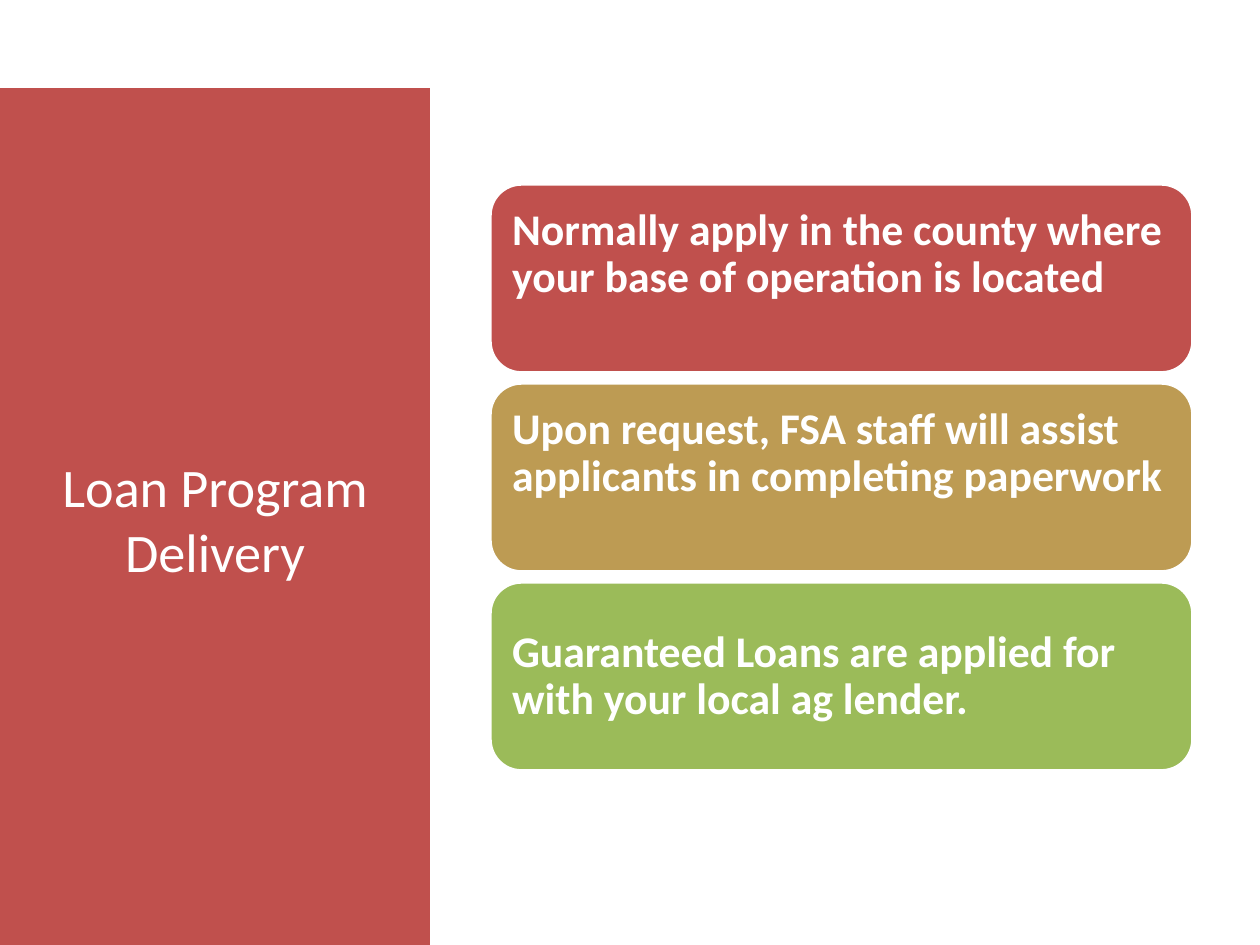
from pptx import Presentation
from pptx.dml.color import RGBColor
from pptx.enum.shapes import MSO_SHAPE as Shape
from pptx.enum.text import MSO_ANCHOR as Anchor, PP_ALIGN as Align
from pptx.util import Emu, Pt

PX_PER_INCH = 126
WHITE, RED, GOLD, GREEN = "FFFFFF", "C0504D", "BD9B53", "9BBB59"
INSET = 13
EMPTY_LINE = 47

# Text, card colour, extra room kept free below the text
CARDS = [
    ("Normally apply in the county where your base of operation is located", RED, EMPTY_LINE),
    ("Upon request, FSA staff will assist applicants in completing paperwork", GOLD, EMPTY_LINE),
    ("Guaranteed Loans are applied for with your local ag lender.", GREEN, 0),
]


def px(length):
    return Emu(round(length * 914400 / PX_PER_INCH))


def color(hex_string):
    return RGBColor.from_string(hex_string)


def add_text_shape(slide, kind, box, fill, text, size, align, bold=False):
    """Add a filled shape with one paragraph of white, vertically centred text."""
    shape = slide.shapes.add_shape(kind, *map(px, box))
    shape.shadow.inherit = False
    shape.fill.solid()
    shape.fill.fore_color.rgb = color(fill)

    frame = shape.text_frame
    frame.word_wrap = True
    frame.vertical_anchor = Anchor.MIDDLE
    frame.margin_left = frame.margin_right = px(INSET)
    frame.text = text
    paragraph = frame.paragraphs[0]
    paragraph.alignment = align
    font = paragraph.runs[0].font
    font.name, font.size, font.bold = "Calibri", Pt(size), bold
    font.color.rgb = color(WHITE)
    return shape


def add_title_panel(slide, box):
    panel = add_text_shape(slide, Shape.RECTANGLE, box, RED,
                           "Loan Program Delivery", 31, Align.CENTER)
    panel.line.fill.background()


def add_cards(slide, box, gap=10):
    """Stack the cards with equal gaps so that they fill the box."""
    left, top, width, height = box
    card_height = (height - gap * (len(CARDS) - 1)) / len(CARDS)
    for index, (text, fill, room_below) in enumerate(CARDS):
        card_box = (left, top + index * (card_height + gap), width, card_height)
        card = add_text_shape(slide, Shape.ROUNDED_RECTANGLE, card_box, fill,
                              text, 25, Align.LEFT, bold=True)
        card.line.color.rgb = color(WHITE)
        card.line.width = Pt(2)
        frame = card.text_frame
        frame.margin_top = px(INSET)
        frame.margin_bottom = px(INSET + room_below)
        frame.paragraphs[0].line_spacing = 0.9


def main():
    presentation = Presentation()
    presentation.slide_width, presentation.slide_height = px(1260), px(945)
    slide = presentation.slides.add_slide(presentation.slide_layouts[6])
    add_cards(slide, (490, 184, 703, 587))
    add_title_panel(slide, (0, 88, 430, 861))
    presentation.save("out.pptx")


if __name__ == "__main__":
    main()
